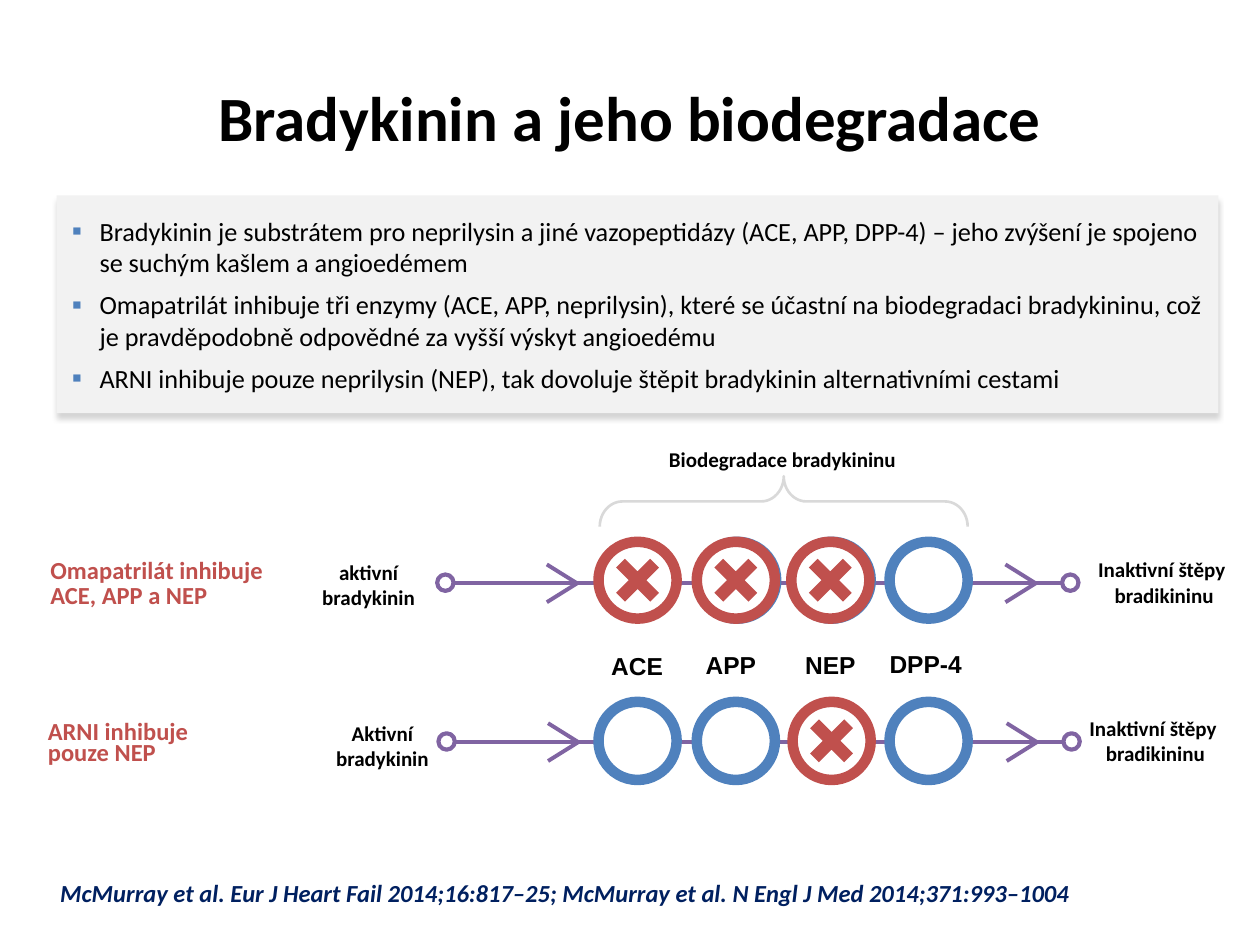
"""Build the slide on bradykinin and its biodegradation."""
from lxml.etree import SubElement
from pptx import Presentation
from pptx.dml.color import RGBColor
from pptx.enum.shapes import MSO_CONNECTOR, MSO_SHAPE
from pptx.enum.text import MSO_ANCHOR, MSO_AUTO_SIZE, PP_ALIGN
from pptx.oxml import parse_xml
from pptx.oxml.ns import nsdecls, qn
from pptx.util import Inches, Pt

BLUE, RED, PURPLE = "4F81BD", "C0504D", "8064A2"
LEFT, CENTER = PP_ALIGN.LEFT, PP_ALIGN.CENTER
TOP, MIDDLE, BOTTOM = MSO_ANCHOR.TOP, MSO_ANCHOR.MIDDLE, MSO_ANCHOR.BOTTOM


def paint(sp, fill=None, line=None, width=1):
    sp.shadow.inherit = False
    if fill:
        sp.fill.solid()
        sp.fill.fore_color.rgb = RGBColor.from_string(fill)
    else:
        sp.fill.background()
    if line:
        sp.line.color.rgb = RGBColor.from_string(line)
        sp.line.width = Pt(width)
    else:
        sp.line.fill.background()


def write(sp, paras, size, color="000000", font="Calibri", bold=True, italic=False,
          align=LEFT, anchor=TOP, inset=(0, 0), spacing=None, wrap=True):
    tf = sp.text_frame
    tf.word_wrap = wrap
    tf.auto_size = MSO_AUTO_SIZE.NONE if wrap else MSO_AUTO_SIZE.SHAPE_TO_FIT_TEXT
    tf.vertical_anchor = anchor
    tf.margin_left = tf.margin_right = Inches(inset[0])
    tf.margin_top = tf.margin_bottom = Inches(inset[1])
    for i, text in enumerate(paras):
        p = tf.add_paragraph() if i else tf.paragraphs[0]
        p.alignment = align
        if spacing:
            p.line_spacing = Pt(spacing)
        for j, part in enumerate(text.split("\n")):
            if j:
                p.add_line_break()
            r = p.add_run()
            r.text = part
            r.font.name, r.font.size = font, Pt(size)
            r.font.bold, r.font.italic = bold, italic
            r.font.color.rgb = RGBColor.from_string(color)
    return tf


prs = Presentation()
prs.slide_width, prs.slide_height = Inches(10), Inches(7.5)
s = prs.slides.add_slide(prs.slide_layouts[6])

boxes = [
    ((0.5, 0.3, 9, 1.25), ["Bradykinin a jeho biodegradace"],
     dict(size=36, align=CENTER, anchor=MIDDLE, inset=(0.1, 0.05))),
    ((0.38, 6.82, 9.13, 0.43),
     ["McMurray et al. Eur J Heart Fail 2014;16:817–25; McMurray et al. N Engl J Med 2014;371:993–1004"],
     dict(size=14, color="002060", italic=True, anchor=BOTTOM, inset=(0.1, 0.05))),
    ((4.57, 3.49, 3.28, 0.34), ["Biodegradace bradykininu"],
     dict(size=12, align=CENTER, anchor=MIDDLE, spacing=12)),
    ((0.4, 4.36, 2.15, 0.56), ["Omapatrilát inhibuje \nACE, APP a NEP"],
     dict(size=14, color=RED, anchor=MIDDLE, spacing=14)),
    ((0.38, 5.67, 2.15, 0.5), ["ARNI inhibuje", "pouze NEP"],
     dict(size=14, color=RED, anchor=MIDDLE, spacing=12)),
]
for x, y, text in [(2.55, 4.44, "aktivní\nbradykinin"), (2.66, 5.72, "Aktivní\nbradykinin")]:
    boxes.append(((x, y, 0.75, 0.4), [text], dict(size=12, align=CENTER, wrap=False)))
for x, y in [(8.71, 4.42), (8.64, 5.68)]:
    boxes.append(((x, y, 1.06, 0.4), ["Inaktivní štěpy ", "bradikininu"],
                  dict(size=12, align=CENTER, wrap=False)))
for x, y, w, text in [(4.85, 5.17, 0.42, "ACE"), (5.6, 5.16, 0.42, "APP"),
                      (6.39, 5.16, 0.42, "NEP"), (7.06, 5.15, 0.59, "DPP-4")]:
    boxes.append(((x, y, w, 0.24), [text], dict(size=14, font="Arial", wrap=False)))
for at, paras, style in boxes:
    write(s.shapes.add_textbox(*map(Inches, at)), paras, **style)

brace = s.shapes.add_shape(MSO_SHAPE.LEFT_BRACE, *map(Inches, (6.02, 2.52, 0.4, 2.92)))
brace.rotation = 90
brace.adjustments[0] = 0.45
paint(brace, line="D9D9D9", width=1.5)

for x, y in [(3.47, 4.63), (3.48, 5.89)]:
    cxn = s.shapes.add_connector(MSO_CONNECTOR.STRAIGHT, Inches(x), Inches(y), Inches(x + 5), Inches(y))
    cxn.line.color.rgb = RGBColor.from_string(PURPLE)
    cxn.line.width = Pt(2.25)
    SubElement(cxn._element.spPr, qn("a:effectLst"))
    for dx in (1.11, 4.75):
        fb = s.shapes.build_freeform(Inches(x + dx - 0.24), Inches(y - 0.15), scale=1)
        fb.add_line_segments([(Inches(x + dx), Inches(y)),
                              (Inches(x + dx - 0.24), Inches(y + 0.15))], close=False)
        paint(fb.convert_to_shape(), line=PURPLE, width=2.25)
    for dx in (0, 4.96):
        dot = s.shapes.add_shape(MSO_SHAPE.OVAL, *map(Inches, (x + dx, y - 0.07, 0.13, 0.13)))
        paint(dot, "FFFFFF", PURPLE, 2.38)

rings = [(x, 4.3, 0.61, color) for x, color in
         [(7.06, BLUE), (5.54, BLUE), (6.29, BLUE), (6.28, RED), (5.53, RED), (4.75, RED)]]
rings += [(x, 5.57, 0.62, color) for x, color in
          [(4.75, BLUE), (5.53, BLUE), (7.06, BLUE), (6.29, RED)]]
a, b, c = 0.17, 0.1, 0.07
cross = [(a, b), (c, 0), (a, -b), (b, -a), (0, -c), (-b, -a),
         (-a, -b), (-c, 0), (-a, b), (-b, a), (0, c), (b, a)]
for x, y, h, color in rings:
    ring = s.shapes.add_shape(MSO_SHAPE.OVAL, *map(Inches, (x, y, 0.62, h)))
    paint(ring, "FFFFFF", color, 6)
    if color == RED:
        pts = [(Inches(x + 0.31 + dx), Inches(y + h / 2 + dy)) for dx, dy in cross]
        fb = s.shapes.build_freeform(*pts[0], scale=1)
        fb.add_line_segments(pts[1:])
        paint(fb.convert_to_shape(), RED)

panel = s.shapes.add_shape(MSO_SHAPE.RECTANGLE, *map(Inches, (0.45, 1.55, 9.22, 1.73)))
paint(panel, "F2F2F2")
panel._element.spPr.find(qn("a:effectLst")).append(parse_xml(
    f'<a:outerShdw {nsdecls("a")} blurRad="38100" dist="38100" dir="5400000" algn="t" rotWithShape="0">'
    '<a:srgbClr val="000000"><a:alpha val="16000"/></a:srgbClr></a:outerShdw>'))
tf = write(panel, [
    "Bradykinin je substrátem pro neprilysin a jiné vazopeptidázy (ACE, APP, DPP-4) – jeho zvýšení je spojeno se suchým kašlem a angioedémem",
    "Omapatrilát inhibuje tři enzymy (ACE, APP, neprilysin), které se účastní na biodegradaci bradykininu, což je pravděpodobně odpovědné za vyšší výskyt angioedému",
    "ARNI inhibuje pouze neprilysin (NEP), tak dovoluje štěpit bradykinin alternativními cestami",
], 15, bold=False, anchor=MIDDLE, inset=(0.12, 0.12))
for p in tf.paragraphs:
    p.space_after = Pt(6)
    pPr = p._p.get_or_add_pPr()
    pPr.set("marL", str(Inches(0.22)))
    pPr.set("indent", str(Inches(-0.22)))
    SubElement(SubElement(pPr, qn("a:buClr")), qn("a:srgbClr")).set("val", BLUE)
    SubElement(pPr, qn("a:buSzPct")).set("val", "110000")
    SubElement(pPr, qn("a:buFont")).set("typeface", "Arial")
    SubElement(pPr, qn("a:buChar")).set("char", "▪")

prs.save("out.pptx")
